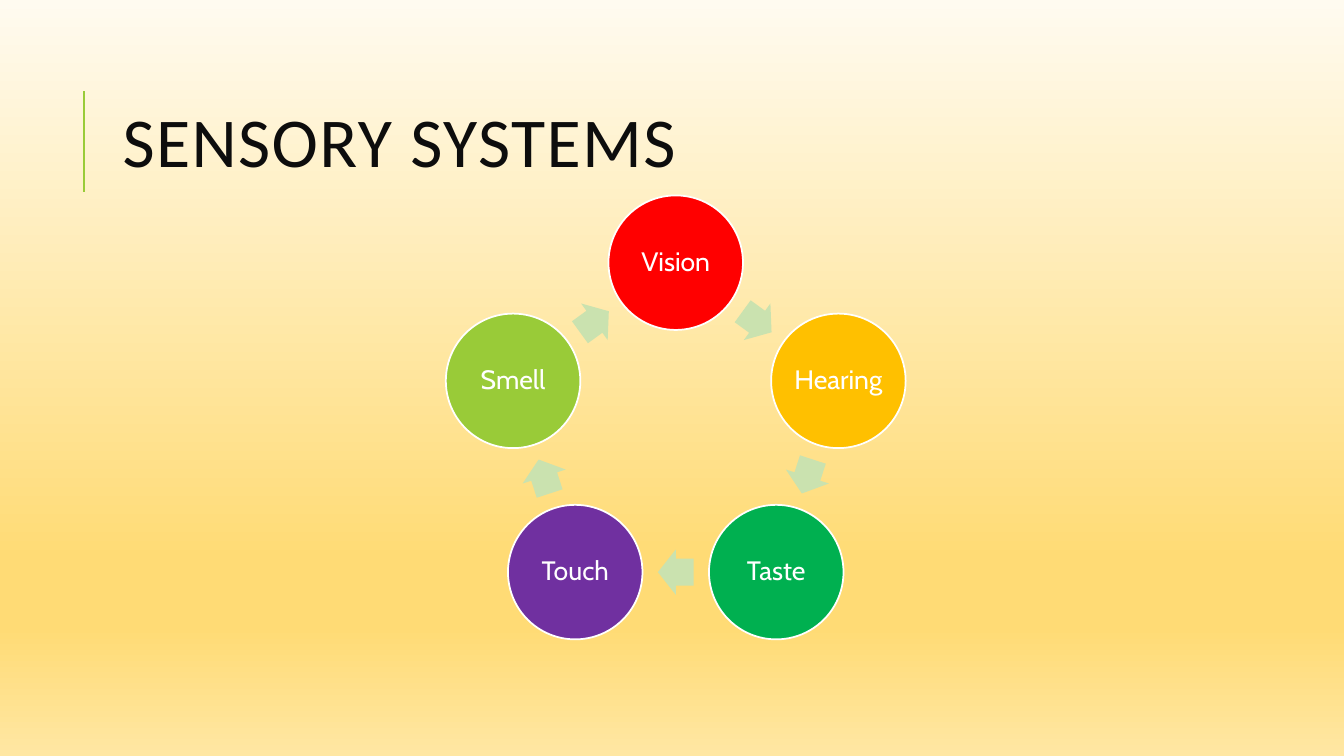
from copy import deepcopy
from math import cos, radians, sin

from pptx import Presentation
from pptx.dml.color import RGBColor
from pptx.enum.shapes import MSO_CONNECTOR as Connector, MSO_SHAPE as Shape
from pptx.enum.text import MSO_ANCHOR as Anchor, PP_ALIGN as Align
from pptx.oxml.ns import qn
from pptx.util import Cm, Pt

WHITE = RGBColor(0xFF, 0xFF, 0xFF)
INK = RGBColor(0x0D, 0x0D, 0x0D)
RED = RGBColor(0xFF, 0x00, 0x00)
AMBER = RGBColor(0xFF, 0xC0, 0x00)
GREEN = RGBColor(0x00, 0xB0, 0x50)
PURPLE = RGBColor(0x70, 0x30, 0xA0)
LIME = RGBColor(0x99, 0xCB, 0x38)
PALE_LIME = RGBColor(0xCA, 0xE2, 0xAF)
CREAM = RGBColor(0xFF, 0xFB, 0xF0)
GOLD = RGBColor(0xFF, 0xDB, 0x75)
LIGHT_GOLD = RGBColor(0xFF, 0xE7, 0xA3)

BACKGROUND_STOPS = [(0, CREAM), (0.74, GOLD), (0.83, GOLD), (1, LIGHT_GOLD)]
SENSES = [("Vision", RED), ("Hearing", AMBER), ("Taste", GREEN),
          ("Touch", PURPLE), ("Smell", LIME)]

# Cycle geometry in centimetres
CENTER_X, CENTER_Y, RADIUS = 17.03, 10.93, 4.31
CIRCLE_SIZE = 3.39
ARROW_LENGTH, ARROW_WIDTH = 0.9, 1.14
STEP = 360 / len(SENSES)

TITLE_FONT = {"name": "Calibri", "size": Pt(50)}
SENSE_FONT = {"name": "Cabin", "size": Pt(19)}
MARGINS = ("margin_left", "margin_top", "margin_right", "margin_bottom")
CIRCLE_FRAME = {"vertical_anchor": Anchor.MIDDLE, "word_wrap": True,
                **dict.fromkeys(MARGINS, Cm(0.08))}
TITLE_FRAME = {"vertical_anchor": Anchor.MIDDLE, "word_wrap": True}


def apply(target, values):
    for name, value in values.items():
        setattr(target, name, value)


def paint_background(page):
    fill = page.background.fill
    fill.gradient()
    fill.gradient_angle = 270
    stop_list = page.element.find(".//" + qn("a:gsLst"))
    while len(stop_list) < len(BACKGROUND_STOPS):
        stop_list.append(deepcopy(stop_list[0]))
    for stop, (position, color) in zip(fill.gradient_stops, BACKGROUND_STOPS):
        stop.position = position
        stop.color.rgb = color


def write(shape, text, frame_format, font_format, color, paragraph_format):
    frame = shape.text_frame
    apply(frame, frame_format)
    para = frame.paragraphs[0]
    apply(para, paragraph_format)
    span = para.add_run()
    span.text = text
    apply(span.font, font_format)
    span.font.color.rgb = color
    return span


def add_title(page, text):
    box = page.shapes.add_textbox(Cm(2.84), Cm(1.63), Cm(27), Cm(4.17))
    span = write(box, text, TITLE_FRAME, TITLE_FONT, INK,
                 {"line_spacing": 0.8})
    span.font._element.set("spc", "100")


def add_title_rule(page):
    rule = page.shapes.add_connector(Connector.STRAIGHT, Cm(2.11), Cm(4.83),
                                     Cm(2.11), Cm(2.29))
    rule.line.color.rgb = LIME
    rule.line.width = Pt(1.5)
    properties = rule._element.spPr
    properties.append(properties.makeelement(qn("a:effectLst"), {}))


def ring_point(angle, radius):
    """Return the point at a clockwise angle in degrees from the top."""
    return (CENTER_X + radius * sin(radians(angle)),
            CENTER_Y - radius * cos(radians(angle)))


def add_centered(page, kind, center, width, height, color):
    x, y = center
    shape = page.shapes.add_shape(kind, Cm(x - width / 2), Cm(y - height / 2),
                                  Cm(width), Cm(height))
    shape.shadow.inherit = False
    shape.fill.solid()
    shape.fill.fore_color.rgb = color
    return shape


def add_sense(page, name, color, angle):
    circle = add_centered(page, Shape.OVAL, ring_point(angle, RADIUS),
                          CIRCLE_SIZE, CIRCLE_SIZE, color)
    circle.line.color.rgb = WHITE
    circle.line.width = Pt(1.25)
    write(circle, name, CIRCLE_FRAME, SENSE_FONT, WHITE,
          {"alignment": Align.CENTER, "line_spacing": 0.9})


def add_arrow(page, angle):
    """Add the arrow halfway between two circles, along the line joining them."""
    middle = ring_point(angle, RADIUS * cos(radians(STEP / 2)))
    arrow = add_centered(page, Shape.RIGHT_ARROW, middle,
                         ARROW_LENGTH, ARROW_WIDTH, PALE_LIME)
    arrow.adjustments[0] = 0.6
    arrow.adjustments[1] = 0.5
    arrow.rotation = angle
    arrow.line.fill.background()


def main():
    deck = Presentation()
    deck.slide_width, deck.slide_height = Cm(33.87), Cm(19.05)
    page = deck.slides.add_slide(deck.slide_layouts[6])
    paint_background(page)
    add_title_rule(page)
    add_title(page, "SENSORY SYSTEMS")
    for index, (name, color) in enumerate(SENSES):
        add_sense(page, name, color, index * STEP)
        add_arrow(page, (index + 0.5) * STEP)
    deck.save("out.pptx")


if __name__ == "__main__":
    main()
